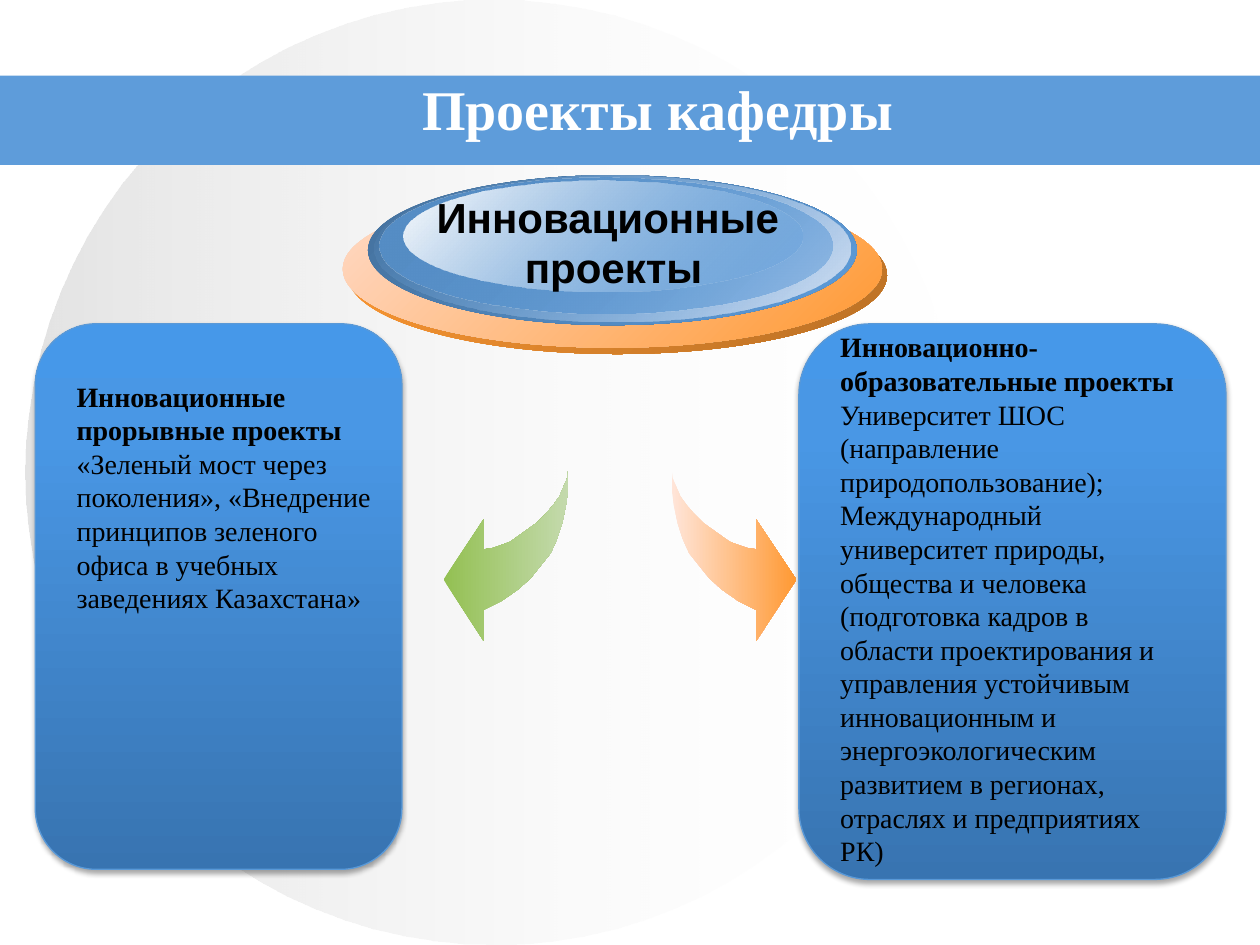
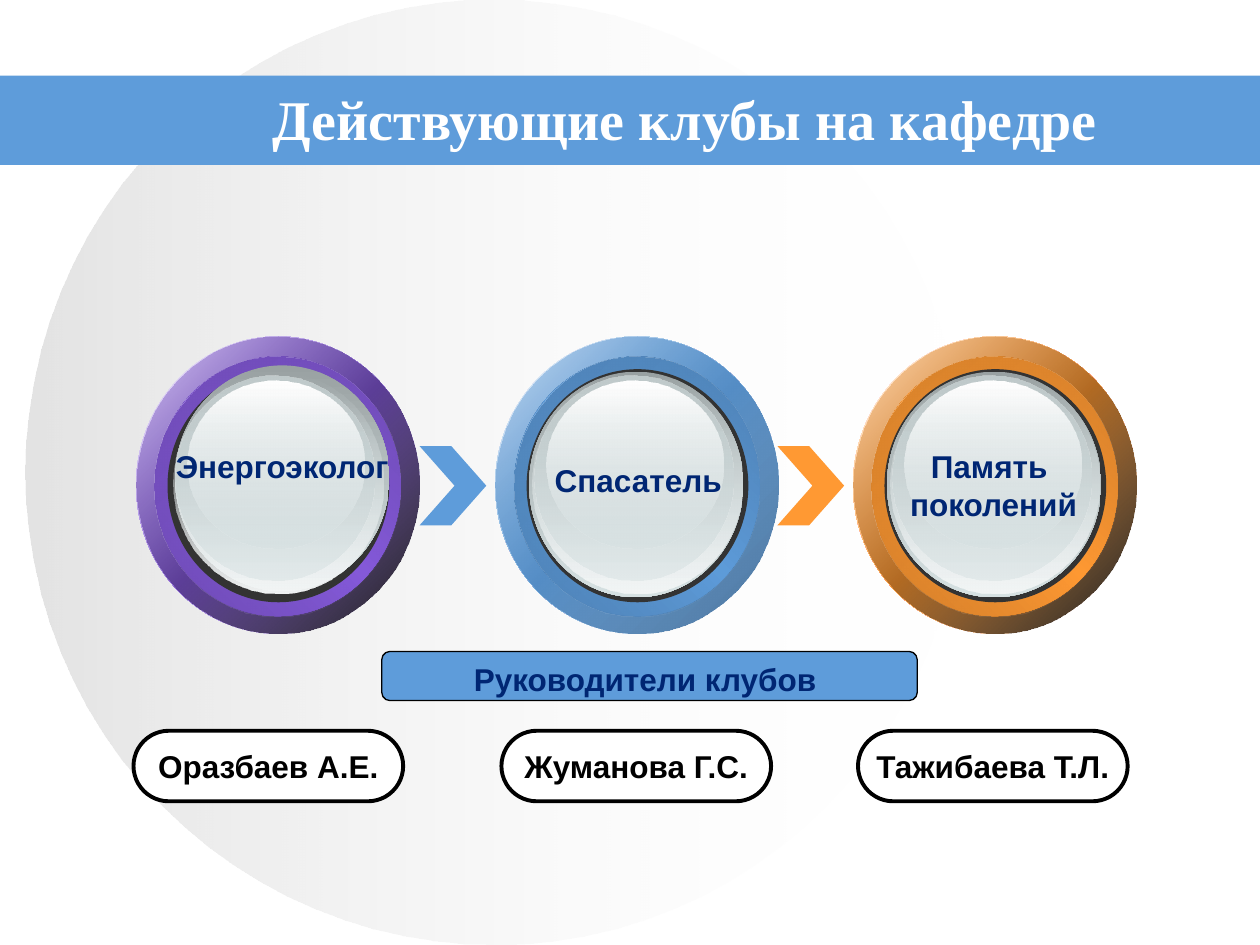
from dataclasses import dataclass

import pptx
import pptx.dml.color
import pptx.enum.shapes
import pptx.enum.text
import pptx.oxml.ns
import pptx.util
from lxml import etree

Inches = pptx.util.Inches
Pt = pptx.util.Pt
RGB = pptx.dml.color.RGBColor
SHAPE = pptx.enum.shapes.MSO_SHAPE
ANCHOR = pptx.enum.text.MSO_ANCHOR
ALIGN = pptx.enum.text.PP_ALIGN
qn = pptx.oxml.ns.qn

WHITE = RGB(0xFF, 0xFF, 0xFF)
BLACK = RGB(0x00, 0x00, 0x00)
SILVER = RGB(0xC0, 0xC0, 0xC0)
CHARCOAL = RGB(0x33, 0x33, 0x33)
NAVY = RGB(0x00, 0x26, 0x73)
BLUE = RGB(0x5E, 0x9C, 0xDA)
BLUE_MID = RGB(0x55, 0x8D, 0xC5)
BLUE_DEEP = RGB(0x43, 0x70, 0x9C)
BLUE_DARK = RGB(0x48, 0x77, 0xA7)
BLUE_SHADE = RGB(0x4D, 0x80, 0xB3)
BLUE_PALE = RGB(0xD8, 0xE3, 0xF3)
PANEL_DARK = RGB(0x38, 0x74, 0xB1)
PANEL_MID = RGB(0x49, 0x97, 0xE5)
PANEL_LIGHT = RGB(0x46, 0x98, 0xE9)
PANEL_EDGE = RGB(0x59, 0x99, 0xD8)
ORANGE = RGB(0xFF, 0x99, 0x33)
ORANGE_EDGE = RGB(0xBA, 0x70, 0x25)
ORANGE_DARK = RGB(0xC3, 0x75, 0x27)
ORANGE_SHADE = RGB(0xD1, 0x7E, 0x2A)
PEACH = RGB(0xFF, 0xDA, 0xC7)
PEACH_PALE = RGB(0xFF, 0xE5, 0xD9)
GREEN = RGB(0x93, 0xC0, 0x52)
GREEN_PALE = RGB(0xC4, 0xDA, 0xAD)
VIOLET = RGB(0x85, 0x5A, 0xDA)
VIOLET_DARK = RGB(0x66, 0x45, 0xA7)
VIOLET_SHADE = RGB(0x6D, 0x4A, 0xB3)
STEEL = RGB(0x99, 0xA1, 0xA2)
STEEL_LIGHT = RGB(0xC1, 0xCB, 0xCC)
GLASS = RGB(0xD6, 0xE1, 0xE2)
GLASS_PALE = RGB(0xF2, 0xF5, 0xF5)

SERIF = "Times New Roman"
SANS = "Arial"


@dataclass
class Ring:
    left: float
    tone: RGB
    dark: RGB
    shade: RGB
    edge: tuple = (100, BLACK, 90)
    rim_shift: tuple = (0, 0)


RINGS = [
    Ring(1.08, VIOLET, VIOLET_DARK, VIOLET_SHADE, rim_shift=(0.04, -0.05)),
    Ring(3.93, BLUE, BLUE_DARK, BLUE_SHADE, edge=(100, BLUE_DEEP)),
    Ring(6.77, ORANGE, ORANGE_DARK, ORANGE_SHADE),
]
RING_TOP = 2.67

# Left-pointing arrow outline, in hundredths of an inch
ARROW_WIDTH = 99
ARROW_OUTLINE = [
    (99, 0), (99, 15), (97, 29), (94, 43), (90, 55), (85, 66), (77, 76),
    (69, 86), (59, 95), (46, 104), (32, 111), (32, 136), (0, 87), (32, 39),
    (32, 63), (39, 62), (45, 60), (53, 57), (60, 52), (67, 47), (74, 42),
    (81, 35), (87, 28), (92, 21), (95, 14), (98, 7),
]


def fill_gradient(shape, stops, angle):
    """Stops are (position %, colour[, opacity %]); the angle runs clockwise."""
    shape.fill.gradient()
    shape.fill.gradient_angle = (360 - angle) % 360
    stop_list = shape.fill._xPr.find(qn("a:gradFill")).find(qn("a:gsLst"))
    for old_stop in list(stop_list):
        stop_list.remove(old_stop)
    for position, colour, *opacity in stops:
        stop = etree.SubElement(stop_list, qn("a:gs"), pos=str(position * 1000))
        tint = etree.SubElement(stop, qn("a:srgbClr"), val=str(colour))
        if opacity:
            etree.SubElement(tint, qn("a:alpha"), val=str(opacity[0] * 1000))


def paint(shape, fill, angle=0, line=None, line_width=0.75):
    """Fill with one colour or a list of gradient stops."""
    shape.shadow.inherit = False
    if isinstance(fill, list):
        fill_gradient(shape, fill, angle)
    else:
        shape.fill.solid()
        shape.fill.fore_color.rgb = fill
    if line is None:
        shape.line.fill.background()
    else:
        shape.line.color.rgb = line
        shape.line.width = Pt(line_width)


def add_figure(slide, kind, box, fill, **style):
    figure = slide.shapes.add_shape(kind, *map(Inches, box))
    paint(figure, fill, **style)
    return figure


def add_soft_shadow(shape):
    effects = shape._element.spPr.find(qn("a:effectLst"))
    shadow = etree.SubElement(
        effects, qn("a:outerShdw"), blurRad=str(Pt(3.1)), dist=str(Pt(1.8)),
        dir="5400000", rotWithShape="0")
    tint = etree.SubElement(shadow, qn("a:srgbClr"), val=str(BLACK))
    etree.SubElement(tint, qn("a:alpha"), val="35000")


def write(shape, lines, size, colour, font=SANS, align=ALIGN.CENTER,
          anchor=ANCHOR.TOP, wrap=True, bold_lines=None):
    """Set one paragraph per line; bold_lines limits bold to the first few."""
    frame = shape.text_frame
    frame.word_wrap = wrap
    frame.vertical_anchor = anchor
    frame.text = "\n".join(lines)
    for index, paragraph in enumerate(frame.paragraphs):
        paragraph.alignment = align
        for run in paragraph.runs:
            run.font.name = font
            run.font.size = Pt(size)
            run.font.color.rgb = colour
            run.font.bold = bold_lines is None or index < bold_lines


def add_label(slide, box, lines, size, colour, **style):
    label = slide.shapes.add_textbox(*map(Inches, box))
    write(label, lines, size, colour, **style)


def add_base_slide(deck, title, title_box):
    """Blank slide with the background disc, the blue band and the title."""
    slide = deck.slides.add_slide(deck.slide_layouts[6])
    add_figure(slide, SHAPE.OVAL, (0.2, 0, 7.44, 7.5),
               [(0, SILVER, 44), (100, WHITE, 0)])
    add_figure(slide, SHAPE.RECTANGLE, (0, 0.6, 10, 0.71), BLUE)
    add_label(slide, title_box, [title], 32, WHITE, font=SERIF,
              anchor=ANCHOR.MIDDLE)
    return slide


def add_panel(slide, box, text_box, lines):
    """Rounded panel; text_box is placed from the panel's corner."""
    left, top = box[:2]
    dx, dy, width, height = text_box
    panel = add_figure(
        slide, SHAPE.ROUNDED_RECTANGLE, box,
        [(0, PANEL_DARK), (80, PANEL_MID), (100, PANEL_LIGHT)],
        angle=270, line=PANEL_EDGE)
    add_soft_shadow(panel)
    add_label(slide, (left + dx, top + dy, width, height), lines, 16, BLACK,
              font=SERIF, align=ALIGN.LEFT, bold_lines=1)


def add_curved_arrow(slide, left, top, stops, mirrored=False):
    points = [(ARROW_WIDTH - x if mirrored else x, y) for x, y in ARROW_OUTLINE]
    outline = slide.shapes.build_freeform(*points[0], scale=Inches(0.01))
    outline.add_line_segments(points[1:], close=True)
    paint(outline.convert_to_shape(Inches(left), Inches(top)), stops)


def add_hub(slide, left, top):
    """Layered oval disc with the central topic."""
    layers = [
        (0.04, 0.17, 4.28, 1.25, [(0, ORANGE), (100, ORANGE_EDGE)]),
        (0, 0.12, 4.28, 1.25, [(0, PEACH), (100, ORANGE)]),
        (0.2, 0, 3.88, 1.19, [(0, BLUE_DEEP), (100, BLUE)]),
        (0.25, 0, 3.78, 1.16, [(0, BLUE, 0), (100, BLUE_PALE)]),
        (0.29, 0.02, 3.6, 1.08, [(0, BLUE_MID), (100, BLUE, 48)]),
        (0.48, 0.04, 3.17, 0.88, [(0, WHITE), (100, BLUE, 38)]),
    ]
    for dx, dy, width, height, stops in layers:
        add_figure(slide, SHAPE.OVAL, (left + dx, top + dy, width, height),
                   stops, angle=45)
    add_label(slide, (left + 0.63, top + 0.08, 3.04, 0.91),
              ["Инновационные ", "проекты"], 24, BLACK, wrap=False)


def add_ring(slide, ring, top):
    """Coloured ring around a glass button."""
    tone, dark = ring.tone, ring.dark
    rim_dx, rim_dy = ring.rim_shift
    outer, inner = (0, 0, 2.25, 2.36), (0.15, 0.16, 1.95, 2.06)
    layers = [
        (outer, [(0, WHITE), (50, tone), (100, WHITE)], 45),
        (outer, [(0, tone, 32), ring.edge], 45),
        (inner, [(0, dark), (50, tone), (100, dark)], 315),
        (inner, [(0, ring.shade), (100, tone, 0)], 45),
        ((0.25, 0.26, 1.76, 1.85), CHARCOAL, 0),
        ((0.27 + rim_dx, 0.28 + rim_dy, 1.7, 1.79),
         [(0, STEEL), (100, GLASS)], 90),
        ((0.3, 0.29, 1.66, 1.75), [(0, GLASS, 0), (100, GLASS_PALE)], 90),
        ((0.31, 0.31, 1.58, 1.63), [(0, STEEL_LIGHT), (100, GLASS, 48)], 90),
        ((0.41, 0.35, 1.4, 1.33), [(0, WHITE), (100, GLASS, 38)], 90),
    ]
    for (dx, dy, width, height), fill, angle in layers:
        add_figure(slide, SHAPE.OVAL,
                   (ring.left + dx, top + dy, width, height), fill, angle=angle)


def build_projects(deck):
    slide = add_base_slide(deck, "Проекты кафедры", (1.93, 0.59, 6.58, 0.53))
    add_panel(slide, (0.28, 2.57, 2.91, 4.33), (0.23, 0.39, 2.6, 1.99), [
        "Инновационные прорывные проекты",
        "«Зеленый мост через поколения», «Внедрение принципов зеленого офиса "
        "в учебных заведениях Казахстана»",
    ])
    add_panel(slide, (6.34, 2.57, 3.39, 4.41), (0.23, 0, 2.91, 4.64), [
        "Инновационно-образовательные проекты",
        "Университет ШОС (направление природопользование);",
        "Международный университет природы, общества и человека (подготовка "
        "кадров в области проектирования и управления устойчивым "
        "инновационным и энергоэкологическим развитием в регионах, отраслях "
        "и предприятиях РК)",
    ])
    add_curved_arrow(slide, 3.52, 3.73, [(0, GREEN), (100, GREEN_PALE)])
    add_curved_arrow(slide, 5.33, 3.73, [(0, PEACH_PALE), (100, ORANGE)],
                     mirrored=True)
    add_hub(slide, 2.72, 1.39)


def build_clubs(deck):
    slide = add_base_slide(deck, "Действующие клубы на кафедре",
                           (1.85, 0.67, 7.17, 0.53))
    for left, colour in ((3.33, BLUE), (6.17, ORANGE)):
        chevron = add_figure(slide, SHAPE.CHEVRON, (left, 3.54, 0.53, 0.63),
                             colour)
        chevron.adjustments[0] = 0.525
    for ring in RINGS:
        add_ring(slide, ring, RING_TOP)

    add_label(slide, (1.14, 3.5, 2.2, 0.44), ["Энергоэколог"], 18, NAVY)
    add_label(slide, (4.27, 3.61, 1.59, 0.44), ["Спасатель"], 18, NAVY,
              wrap=False)
    add_label(slide, (7.09, 3.5, 1.59, 0.77), ["Память ", "поколений"], 18,
              NAVY, wrap=False)

    heading = add_figure(slide, SHAPE.ROUNDED_RECTANGLE,
                         (3.03, 5.17, 4.25, 0.39), BLUE, line=BLACK)
    write(heading, ["Руководители клубов "], 18, NAVY)
    leaders = ((1.06, "Оразбаев А.Е."), (3.98, "Жуманова Г.С."),
               (6.81, "Тажибаева Т.Л."))
    for left, leader in leaders:
        pill = add_figure(slide, SHAPE.ROUNDED_RECTANGLE,
                          (left, 5.8, 2.14, 0.56), WHITE, line=BLACK,
                          line_width=2.25)
        pill.adjustments[0] = 0.5
        write(pill, [leader], 18, BLACK, anchor=ANCHOR.MIDDLE, wrap=False)


def main():
    deck = pptx.Presentation()
    deck.slide_width = Inches(10)
    deck.slide_height = Inches(7.5)
    build_projects(deck)
    build_clubs(deck)
    deck.save("out.pptx")


if __name__ == "__main__":
    main()
